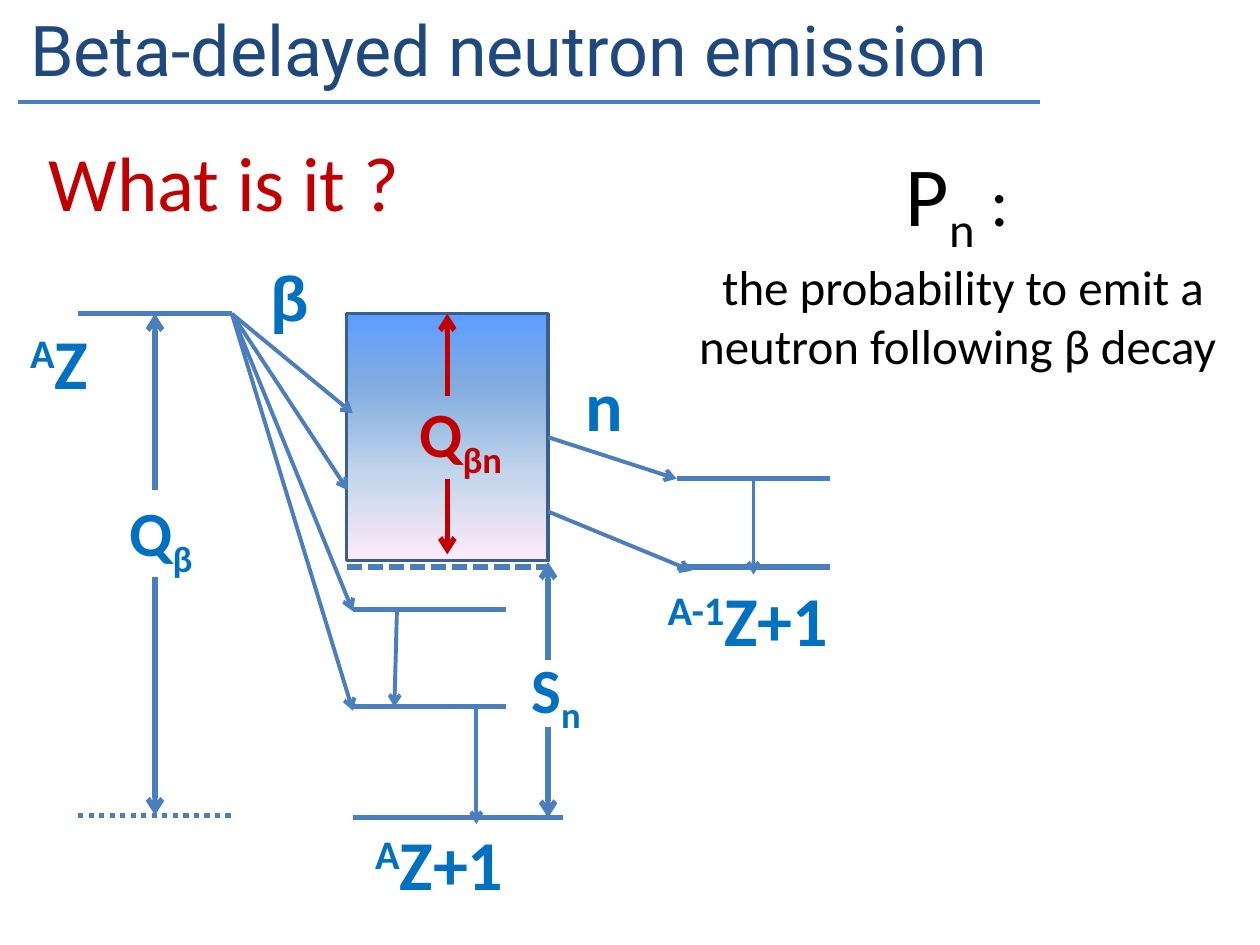
from lxml.etree import SubElement
from pptx import Presentation
from pptx.dml.color import RGBColor
from pptx.enum.dml import MSO_LINE_DASH_STYLE as Dash
from pptx.enum.shapes import MSO_CONNECTOR as Connector, MSO_SHAPE as Preset
from pptx.enum.text import MSO_AUTO_SIZE as AutoSize, PP_ALIGN as Align
from pptx.oxml.ns import qn
from pptx.util import Inches, Pt

THEME = {
    "line": "4B7EBC", "title": "1F497D", "label": "0070C0", "accent": "C00000",
    "text": "000000", "box_line": "3A5F8C",
    "gradient": [(0, "5E9EFF"), (29, "82ACE0"), (66, "C4D6EB"), (100, "FFEBFA")],
    "level": 3, "decay": 2.25, "outline": 2,
    "probability": 48, "question": 44, "large": 40, "medium": 36, "body": 28,
    "font": "Calibri", "title_font": "Roboto", "greek_font": "Arial",
}
COLUMNS, ROWS = 10, 7.5
CELL = Inches(1)
SUPER, SUB = 30000, -25000

presentation = Presentation()
presentation.slide_width = int(COLUMNS * CELL)
presentation.slide_height = int(ROWS * CELL)
slide = presentation.slides.add_slide(presentation.slide_layouts[6])


def add_line(start, end, width="level", color="line", dash=None, arrow=False):
    points = [int(value * CELL) for value in (*start, *end)]
    connector = slide.shapes.add_connector(Connector.STRAIGHT, *points)
    connector.line.color.rgb = RGBColor.from_string(THEME[color])
    connector.line.width = Pt(THEME[width])
    if dash:
        connector.line.dash_style = dash
    if arrow:
        SubElement(connector.line._get_or_add_ln(), qn("a:tailEnd"), type="arrow")
    SubElement(connector._element.spPr, qn("a:effectLst"))


def add_text(area, paragraphs, color, font="font", bold=False, align=Align.LEFT):
    box = slide.shapes.add_textbox(*[int(value * CELL) for value in area])
    frame = box.text_frame
    frame.word_wrap = True
    frame.auto_size = AutoSize.SHAPE_TO_FIT_TEXT
    for index, parts in enumerate(paragraphs):
        paragraph = frame.add_paragraph() if index else frame.paragraphs[0]
        paragraph.alignment = align
        for text, size, baseline in parts:
            run = paragraph.add_run()
            run.text = text
            formats = {"name": THEME[font], "size": Pt(THEME[size]), "bold": bold}
            for name, value in formats.items():
                setattr(run.font, name, value)
            run.font.color.rgb = RGBColor.from_string(THEME[color])
            if baseline:
                run._r.get_or_add_rPr().set("baseline", str(baseline))


parent_left, parent_right, parent_middle = 0.62, 1.84, 1.23
box_left, box_right, box_middle = 2.75, 4.35, 3.55
daughter_left, daughter_right = 2.8, 4.02
final_left, final_right, final_middle = 5.37, 6.59, 5.98
top, bottom, threshold, ground = 2.49, 4.45, 4.5, 6.49
upper, lower, final_upper, parent_ground = 4.84, 5.61, 3.8, 6.47

add_text((0.14, 0, 9.21, 0.77), [[("Beta-delayed neutron emission", "large", 0)]],
         "title", "title_font")
add_line((0.14, 0.81), (8.25, 0.81), "decay")

box = slide.shapes.add_shape(Preset.RECTANGLE, *[
    int(value * CELL) for value in (box_left, top, box_right - box_left, bottom - top)])
box.shadow.inherit = False
box.line.color.rgb = RGBColor.from_string(THEME["box_line"])
box.line.width = Pt(THEME["outline"])
box.fill.gradient()
box.fill.gradient_angle = 270
stops = box._element.spPr.find(qn("a:gradFill")).find(qn("a:gsLst"))
for stop in list(stops):
    stops.remove(stop)
for position, color in THEME["gradient"]:
    stop = SubElement(stops, qn("a:gs"), pos=str(position * 1000))
    SubElement(stop, qn("a:srgbClr"), val=color)

levels = [
    (parent_left, parent_right, top, None),
    (parent_left, parent_right, parent_ground, Dash.ROUND_DOT),
    (daughter_left, 4.47, ground, None),
    (daughter_left, daughter_right, lower, None),
    (daughter_left, daughter_right, upper, None),
    (box_left, box_right, threshold, Dash.SQUARE_DOT),
    (final_left, final_right, threshold, None),
    (final_left, final_right, final_upper, None),
]
for left, right, row, dash in levels:
    if dash == Dash.SQUARE_DOT:
        dash = Dash.DASH
    add_line((left, row), (right, row), dash=dash)
    if dash == Dash.DASH:
        slide.shapes[-1].line._get_or_add_ln().find(qn("a:prstDash")).set("val", "sysDash")

energy_arrows = [
    (parent_middle, 4.58, parent_ground, "line"),
    (parent_middle, 3.89, top, "line"),
    (box_right, 5.24, 4.46, "line"),
    (box_right, 5.77, ground, "line"),
    (box_middle, 3.14, top, "accent"),
    (box_middle, 3.8, 4.4, "accent"),
]
for column, start, end, color in energy_arrows:
    add_line((column, start), (column, end), color=color, arrow=True)

beta_ends = [(2.8, 5.64), (2.8, 4.85), (2.8, 3.28), (2.76, 3.89)]
decays = [((parent_right, top), end) for end in beta_ends] + [
    ((3.78, lower), (3.78, 6.54)),
    ((3.15, 4.85), (3.13, lower)),
    ((box_right, 3.47), (final_left, final_upper)),
    ((box_right, 4.06), (5.49, 4.53)),
    ((final_middle, final_upper), (final_middle, 4.56)),
]
for start, end in decays:
    add_line(start, end, "decay", arrow=True)

labels = [
    ((2.88, 6.46, 1.9, 0.77), [("A", "large", SUPER), ("Z+1", "large", 0)], "label", "font"),
    ((0.93, 3.87, 0.84, 0.71), [("Q", "medium", 0), ("β", "medium", SUB)], "label", "font"),
    ((0.14, 2.49, 0.86, 0.77), [("A", "large", SUPER), ("Z", "large", 0)], "label", "font"),
    ((4.12, 5.11, 0.84, 0.71), [("S", "medium", 0), ("n", "medium", SUB)], "label", "font"),
    ((5.2, 4.53, 1.9, 0.77), [("A-1", "large", SUPER), ("Z+1", "large", 0)], "label", "font"),
    ((3.23, 3.08, 1.21, 0.71), [("Q", "medium", 0), ("βn", "medium", SUB)], "accent", "font"),
    ((2.05, 2, 0.71, 0.71), [("β", "medium", 0)], "label", "greek_font"),
    ((4.55, 2.82, 0.84, 0.77), [("n", "large", 0)], "label", "font"),
]
for area, parts, color, font in labels:
    add_text(area, [parts], color, font, bold=True)

add_text((0.29, 1.02, 4.04, 0.84), [[("What is it ?", "question", 0)]], "accent")
add_text((5.2, 1.08, 4.8, 1.85), [
    [("P", "probability", 0), ("n", "probability", SUB), (" :", "large", 0)],
    [(" the probability to emit a neutron following β decay", "body", 0)],
], "text", align=Align.CENTER)

presentation.save("out.pptx")
